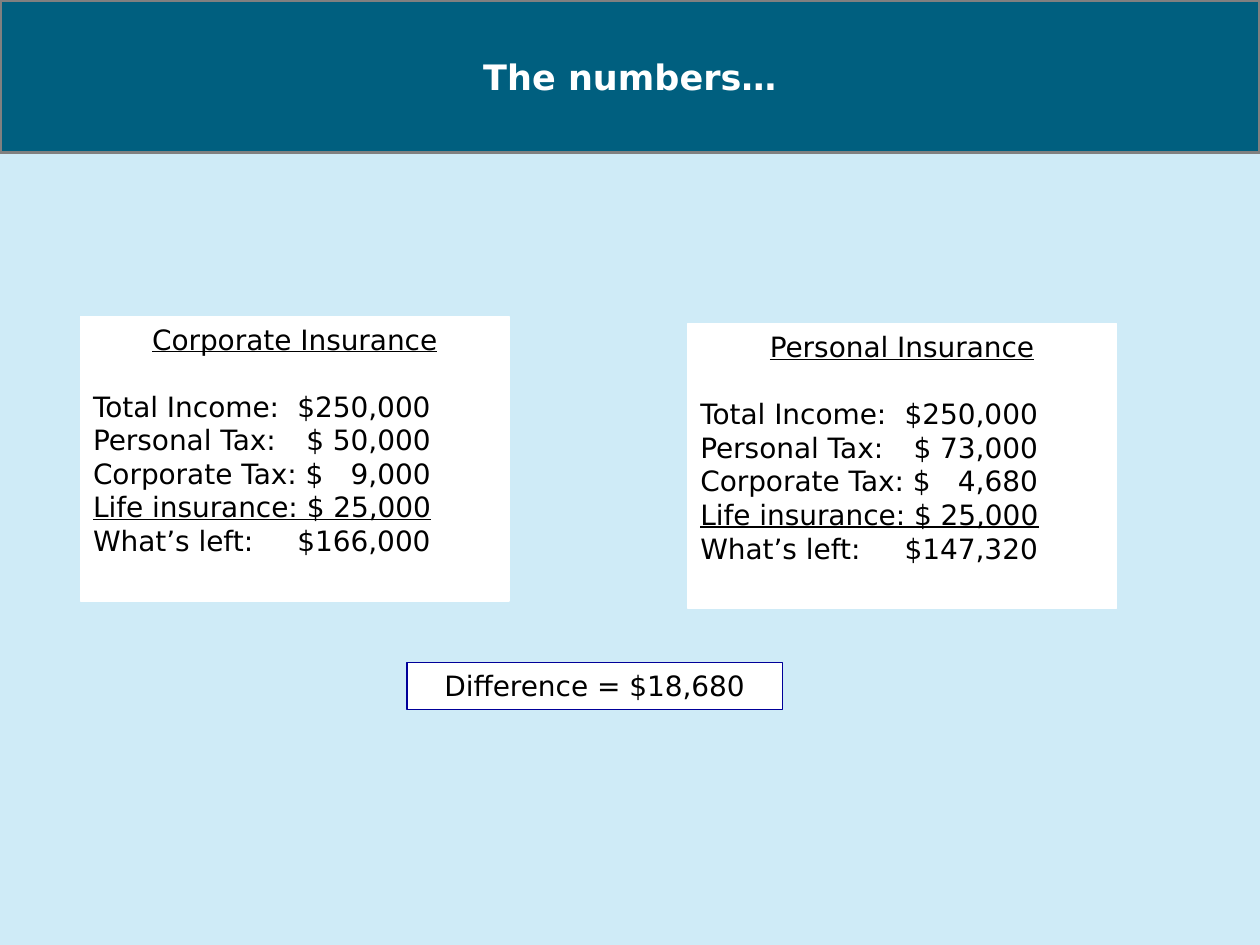
import lxml.etree
import pptx
import pptx.dml.color
import pptx.enum.shapes
import pptx.enum.text
import pptx.oxml.ns
import pptx.util

Inches, Pt = pptx.util.Inches, pptx.util.Pt
ALIGN, ANCHOR = pptx.enum.text.PP_ALIGN, pptx.enum.text.MSO_ANCHOR
COLORS = {"sky": "CFEBF7", "teal": "005F7F", "gray": "808080",
          "white": "FFFFFF", "black": "000000", "navy": "000099"}


class NumbersSlide:
    """Holds the slide and the style of its panels and text."""

    font_name = "DejaVu Sans"
    body_size = 16
    amount_edge = 2.68

    def __init__(self, slide):
        self.slide = slide
        slide.background.fill.solid()
        slide.background.fill.fore_color.rgb = self.color("sky")

    def color(self, name):
        return pptx.dml.color.RGBColor.from_string(COLORS[name])

    def panel(self, left, top, width, height, fill, line, weight=0.75, anchor=ANCHOR.TOP):
        panel = self.slide.shapes.add_shape(
            pptx.enum.shapes.MSO_SHAPE.RECTANGLE,
            Inches(left), Inches(top), Inches(width), Inches(height))
        panel.shadow.inherit = False
        panel.fill.solid()
        panel.fill.fore_color.rgb = self.color(fill)
        panel.line.color.rgb = self.color(line)
        panel.line.width = Pt(weight)
        panel.text_frame.vertical_anchor = anchor
        return panel.text_frame

    def style(self, paragraph, align=ALIGN.CENTER, size=body_size, color="black",
              bold=False, underline=False):
        paragraph.alignment = align
        for run in paragraph.runs:
            run.font.name = self.font_name
            run.font.size = Pt(size)
            run.font.color.rgb = self.color(color)
            run.font.bold = bold
            run.font.underline = underline

    def banner(self, title):
        frame = self.panel(0, 0, 10, 1.21, "teal", "gray", 2, ANCHOR.MIDDLE)
        frame.text = title
        self.style(frame.paragraphs[0], size=20, color="white", bold=True)

    def result(self, text):
        frame = self.panel(3.23, 5.26, 2.98, 0.37, "white", "navy")
        frame.text = text
        self.style(frame.paragraphs[0])

    def amount_tab(self, paragraph):
        qn = pptx.oxml.ns.qn
        tabs = lxml.etree.SubElement(paragraph._p.get_or_add_pPr(), qn("a:tabLst"))
        lxml.etree.SubElement(tabs, qn("a:tab"), pos=str(Inches(self.amount_edge)), algn="r")

    def statement(self, left, top, heading, personal_tax, corporate_tax, remainder):
        frame = self.panel(left, top, 3.4, 2.26, "white", "white")
        frame.text = "\n".join([
            heading,
            "Total Income:\t$250,000",
            f"Personal Tax:\t$ {personal_tax}",
            f"Corporate Tax: $\t{corporate_tax}",
            "Life insurance: $ 25,000",
            f"What’s left:\t${remainder}"])
        title, *rows = frame.paragraphs
        self.style(title, underline=True)
        rows[0].space_before = Pt(19)
        for row in rows:
            self.amount_tab(row)
            self.style(row, ALIGN.LEFT, underline=row.text.startswith("Life"))


def main():
    deck = pptx.Presentation()
    deck.slide_width, deck.slide_height = Inches(10), Inches(7.5)
    numbers = NumbersSlide(deck.slides.add_slide(deck.slide_layouts[6]))
    numbers.banner("The numbers…")
    numbers.statement(0.64, 2.51, "Corporate Insurance", "50,000", "9,000", "166,000")
    numbers.result("Difference = $18,680")
    numbers.statement(5.46, 2.57, "Personal Insurance", "73,000", "4,680", "147,320")
    deck.save("out.pptx")


if __name__ == "__main__":
    main()
